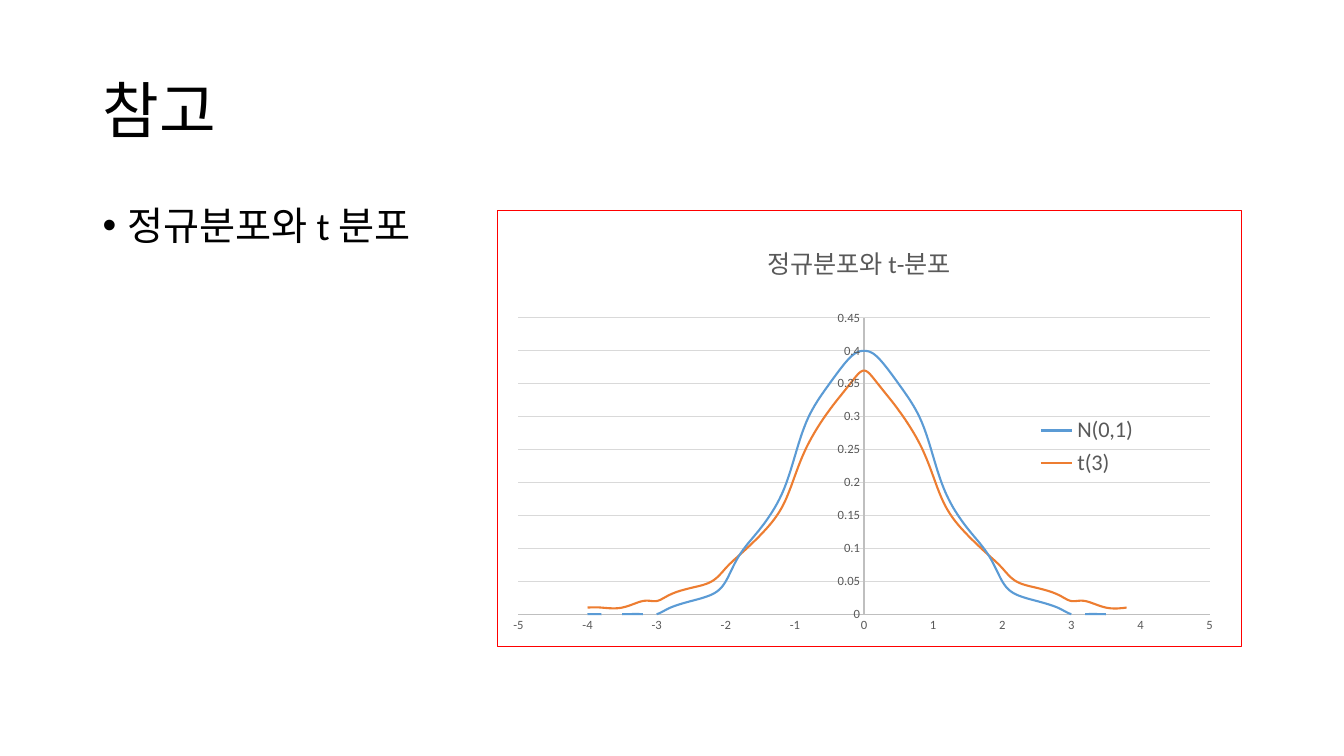
import math

import pptx
import pptx.chart.data
import pptx.dml.color
import pptx.enum.chart
import pptx.enum.text
import pptx.oxml
import pptx.oxml.ns
import pptx.util
from pptx.util import Inches, Pt

RGBColor = pptx.dml.color.RGBColor
BLACK = RGBColor(0x00, 0x00, 0x00)
DARK_GRAY = RGBColor(0x59, 0x59, 0x59)
AXIS_GRAY = RGBColor(0xBF, 0xBF, 0xBF)
GRID_GRAY = RGBColor(0xD9, 0xD9, 0xD9)
BLUE = RGBColor(0x5B, 0x9B, 0xD5)
ORANGE = RGBColor(0xED, 0x7D, 0x31)
RED = RGBColor(0xFF, 0x00, 0x00)
FONT = "Calibri"

HEADING = "참고"
TOPIC = "정규분포와 t 분포"
CHART_TITLE = "정규분포와 t-분포"


def normal_density(x):
    return math.exp(-x * x / 2) / math.sqrt(2 * math.pi)


def t3_density(x):
    """Student's t density with 3 degrees of freedom."""
    return 2 / (math.pi * math.sqrt(3) * (1 + x * x / 3) ** 2)


CURVES = [("N(0,1)", normal_density, BLUE), ("t(3)", t3_density, ORANGE)]
X_VALUES = [-4 + 0.25 * step for step in range(32)]

# minimum, maximum, major unit
X_SCALE = (-5, 5, 1)
Y_SCALE = (0, 0.45, 0.05)

# left, top, width, height in inches
HEADING_BOX = (0.92, 0.4, 11.5, 1.45)
TOPIC_BOX = (0.92, 2, 11.5, 4.76)
CHART_BOX = (4.93, 2.08, 7.39, 4.34)

# percent of the chart
TITLE_LAYOUT = {"x": 35.6, "y": 6}
PLOT_LAYOUT = {"x": 2.8, "y": 24.7, "w": 92.9, "h": 67.9}
LEGEND_LAYOUT = {"x": 71.7, "y": 46.2, "w": 15, "h": 16}


def set_font(font, size, color):
    font.name = FONT
    font.size = Pt(size)
    font.bold = False
    font.color.rgb = color


def add_text(slide, text, box, *, size, color=BLACK, anchor="TOP", bullet=None, before=0):
    frame = slide.shapes.add_textbox(*map(Inches, box)).text_frame
    frame.word_wrap = True
    frame.vertical_anchor = getattr(pptx.enum.text.MSO_ANCHOR, anchor)
    paragraph = frame.paragraphs[0]
    paragraph.line_spacing = 0.9
    paragraph.space_before = Pt(before)
    run = paragraph.add_run()
    run.text = text
    set_font(run.font, size, color)
    if bullet:
        props = paragraph._p.get_or_add_pPr()
        props.set("marL", str(Inches(0.25)))
        props.set("indent", str(Inches(-0.25)))
        props.append(pptx.oxml.parse_xml(
            f'<a:buFont {pptx.oxml.ns.nsdecls("a")} typeface="Arial"/>'))
        props.append(pptx.oxml.parse_xml(
            f'<a:buChar {pptx.oxml.ns.nsdecls("a")} char="{bullet}"/>'))


def set_layout(element, index, percents, inner=False):
    """Place a chart part by hand; index is the layout's place among its siblings."""
    for old in element.findall(pptx.oxml.ns.qn("c:layout")):
        element.remove(old)
    target = '<c:layoutTarget val="inner"/>' if inner else ""
    modes = "".join(f'<c:{key}Mode val="edge"/>' for key in "xy")
    values = "".join(f'<c:{key} val="{value / 100:.3f}"/>' for key, value in percents.items())
    element.insert(index, pptx.oxml.parse_xml(
        f'<c:layout {pptx.oxml.ns.nsdecls("c")}><c:manualLayout>'
        f'{target}{modes}{values}</c:manualLayout></c:layout>'))


def smooth_line(series):
    """Turn on smoothing, which XY series do not offer as a property."""
    element = series._element
    for old in element.findall(pptx.oxml.ns.qn("c:smooth")):
        element.remove(old)
    element.append(pptx.oxml.parse_xml(
        f'<c:smooth {pptx.oxml.ns.nsdecls("c")} val="1"/>'))


def style_axis(axis, scale, gridlines):
    axis.minimum_scale, axis.maximum_scale, axis.major_unit = scale
    axis.major_tick_mark = axis.minor_tick_mark = pptx.enum.chart.XL_TICK_MARK.NONE
    axis.format.line.color.rgb = AXIS_GRAY
    axis.format.line.width = Pt(0.75)
    axis.tick_labels.number_format = "General"
    axis.tick_labels.number_format_is_linked = False
    set_font(axis.tick_labels.font, 9, DARK_GRAY)
    axis.has_major_gridlines = gridlines
    if gridlines:
        axis.major_gridlines.format.line.color.rgb = GRID_GRAY
        axis.major_gridlines.format.line.width = Pt(0.75)


def add_density_chart(slide):
    data = pptx.chart.data.XyChartData()
    for name, density, _ in CURVES:
        series = data.add_series(name)
        for x in X_VALUES:
            series.add_data_point(round(x, 1), round(density(x), 2))
    chart = slide.shapes.add_chart(
        pptx.enum.chart.XL_CHART_TYPE.XY_SCATTER_SMOOTH_NO_MARKERS,
        *map(Inches, CHART_BOX), data).chart
    set_font(chart.font, 10, BLACK)

    plot = chart.plots[0]
    plot.vary_by_categories = False
    for series, (_, _, color) in zip(plot.series, CURVES):
        smooth_line(series)
        series.marker.style = pptx.enum.chart.XL_MARKER_STYLE.NONE
        series.format.line.color.rgb = color
        series.format.line.width = Pt(1.5)
    style_axis(chart.category_axis, X_SCALE, gridlines=False)
    style_axis(chart.value_axis, Y_SCALE, gridlines=True)

    chart.has_title = True
    title_run = chart.chart_title.text_frame.paragraphs[0].add_run()
    title_run.text = CHART_TITLE
    set_font(title_run.font, 18, DARK_GRAY)
    chart.has_legend = True
    chart.legend.position = pptx.enum.chart.XL_LEGEND_POSITION.RIGHT
    chart.legend.include_in_layout = False
    set_font(chart.legend.font, 16, DARK_GRAY)

    set_layout(chart.chart_title._element, 1, TITLE_LAYOUT)
    set_layout(chart.legend._element, 1, LEGEND_LAYOUT)
    chart_space = chart._chartSpace
    set_layout(chart_space.chart.plotArea, 0, PLOT_LAYOUT, inner=True)
    chart_space.chart.addnext(pptx.oxml.parse_xml(
        f'<c:spPr {pptx.oxml.ns.nsdecls("c", "a")}><a:noFill/><a:ln w="{Pt(0.75)}">'
        f'<a:solidFill><a:srgbClr val="{RED}"/></a:solidFill></a:ln></c:spPr>'))


def main():
    deck = pptx.Presentation()
    deck.slide_width, deck.slide_height = Inches(13.33), Inches(7.5)
    slide = deck.slides.add_slide(deck.slide_layouts[6])
    add_text(slide, HEADING, HEADING_BOX, size=44, anchor="MIDDLE")
    add_text(slide, TOPIC, TOPIC_BOX, size=28, bullet="•", before=10)
    add_density_chart(slide)
    deck.save("out.pptx")


if __name__ == "__main__":
    main()
